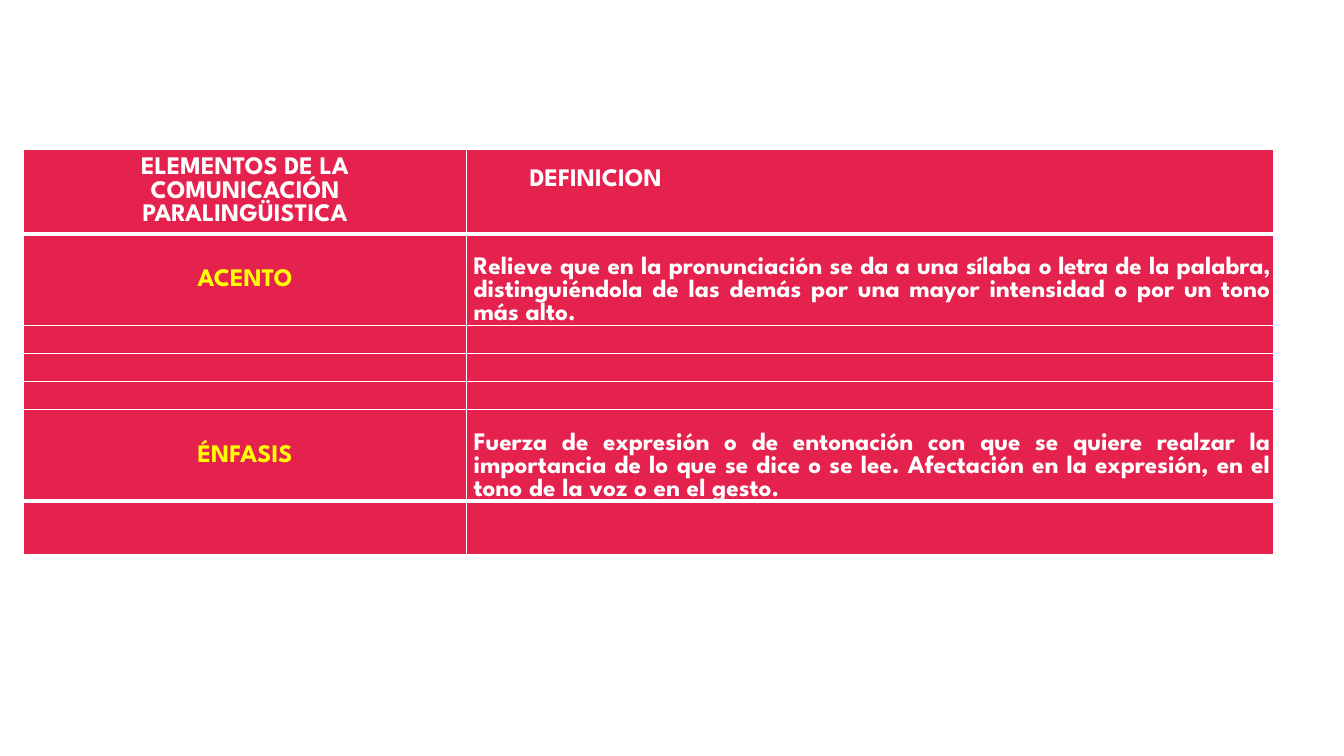
import pptx
import pptx.util
import pptx.dml.color
import pptx.enum.text
import pptx.oxml.ns
import lxml.etree

Pt = pptx.util.Pt
Align = pptx.enum.text.PP_ALIGN
qn = pptx.oxml.ns.qn

FONT = "League Spartan"
RED, WHITE, YELLOW = "E5224E", "FFFFFF", "FFFF00"
THIN, THICK = 1, 3
COLUMN_WIDTHS = [316.5, 576.5]
ROW_HEIGHTS = [60.2, 65, 20, 20, 20, 65.5, 38]

HEADINGS = ["ELEMENTOS DE LA COMUNICACIÓN PARALINGÜISTICA", "DEFINICION"]
# Table row -> element and the runs of its definition, each with its letter spacing
ELEMENTS = {
    1: ("ACENTO", [
        ("Relieve que en la pronunciación se da a una sílaba ", 0),
        ("o letra ", -0.3),
        ("de la palabra, distinguiéndola de las demás por una mayor "
         "intensidad o por un tono más alto.", 0)]),
    5: ("ÉNFASIS", [
        ("Fuerza de expresión o de entonación con que se quiere realzar la "
         "importancia de lo que se dice o se lee. Afectación en la expresión, "
         "en el tono de la voz o en el gesto.", 0)]),
}


def rgb(value):
    return pptx.dml.color.RGBColor.from_string(value)


def write(cell, runs, color=WHITE, align=Align.LEFT, left=0, top=0, right=0,
          spacing=1.0):
    """Fill a cell with one paragraph made of (text, letter spacing) runs."""
    cell.margin_left, cell.margin_right = Pt(left), Pt(right)
    cell.margin_top = Pt(top)
    paragraph = cell.text_frame.paragraphs[0]
    paragraph.alignment = align
    paragraph.line_spacing = spacing
    for text, tracking in runs:
        run = paragraph.add_run()
        run.text = text
        run.font.name, run.font.size, run.font.bold = FONT, Pt(18), True
        run.font.color.rgb = rgb(color)
        if tracking:
            run.font._element.set("spc", str(round(tracking * 100)))


def style_cell(cell, top, bottom):
    """Red fill, white borders and no insets."""
    properties = cell._tc.get_or_add_tcPr()
    sides = {"a:lnL": THIN, "a:lnR": THIN, "a:lnT": top, "a:lnB": bottom}
    for side, width in sides.items():
        line = lxml.etree.SubElement(properties, qn(side), w=str(Pt(width)))
        fill = lxml.etree.SubElement(line, qn("a:solidFill"))
        lxml.etree.SubElement(fill, qn("a:srgbClr"), val=WHITE)
    cell.fill.solid()
    cell.fill.fore_color.rgb = rgb(RED)
    cell.margin_left = cell.margin_right = 0
    cell.margin_top = cell.margin_bottom = 0


def build_table(slide, left, top):
    frame = slide.shapes.add_table(
        len(ROW_HEIGHTS), len(COLUMN_WIDTHS), Pt(left), Pt(top),
        Pt(sum(COLUMN_WIDTHS)), Pt(sum(ROW_HEIGHTS)))
    table = frame.table
    table.horz_banding = False
    for column, width in zip(table.columns, COLUMN_WIDTHS):
        column.width = Pt(width)

    # Grid: thick rules below the heading and above the last row
    last = len(ROW_HEIGHTS) - 1
    for index, height in enumerate(ROW_HEIGHTS):
        table.rows[index].height = Pt(height)
        for cell in table.rows[index].cells:
            style_cell(cell, THICK if index in (1, last) else THIN,
                       THICK if index in (0, last - 1) else THIN)
            if index and index not in ELEMENTS:
                lxml.etree.SubElement(cell.text_frame.paragraphs[0]._p,
                                      qn("a:endParaRPr"), sz="1000")

    # Headings
    write(table.cell(0, 0), [(HEADINGS[0], 0)], align=Align.CENTER,
          left=19, right=19, top=5, spacing=1.02)
    write(table.cell(0, 1), [(HEADINGS[1], 0)], left=45, top=14)

    # Elements and definitions
    for index, (element, definition) in ELEMENTS.items():
        write(table.cell(index, 0), [(element, 0)], color=YELLOW,
              align=Align.CENTER, left=19, right=19, top=25)
        write(table.cell(index, 1), definition, align=Align.JUSTIFY,
              left=5, right=2, top=16.8, spacing=0.98)


def main():
    deck = pptx.Presentation()
    deck.slide_width, deck.slide_height = Pt(960), Pt(540)
    slide = deck.slides.add_slide(deck.slide_layouts[6])
    build_table(slide, left=16.8, top=106.8)
    deck.save("out.pptx")


if __name__ == "__main__":
    main()
